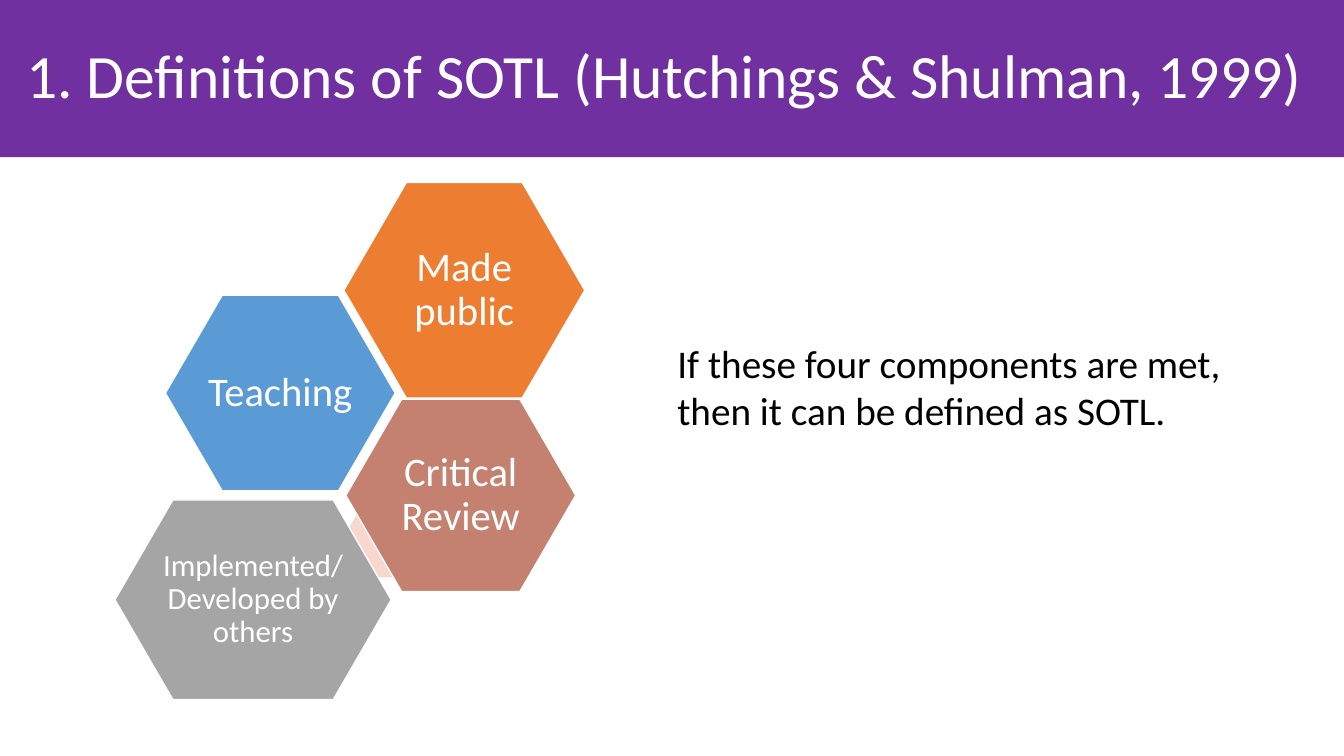
from pptx import Presentation
from pptx.dml.color import RGBColor
from pptx.enum.shapes import MSO_SHAPE
from pptx.enum.text import MSO_ANCHOR, PP_ALIGN
from pptx.util import Emu, Pt

HEXAGON, RECTANGLE = MSO_SHAPE.HEXAGON, MSO_SHAPE.RECTANGLE
MIDDLE, TOP = MSO_ANCHOR.MIDDLE, MSO_ANCHOR.TOP
CENTER, LEFT = PP_ALIGN.CENTER, PP_ALIGN.LEFT

PX = 9144  # 100 px to the inch
FONT = "Calibri"
WHITE = RGBColor(0xFF, 0xFF, 0xFF)
BLACK = RGBColor(0, 0, 0)
PURPLE = RGBColor(0x70, 0x30, 0xA0)
BLUE = RGBColor(0x5B, 0x9B, 0xD5)
ORANGE = RGBColor(0xED, 0x7D, 0x31)
CLAY = RGBColor(0xC4, 0x81, 0x70)
GRAY = RGBColor(0xA5, 0xA5, 0xA5)
PINK = RGBColor(0xF8, 0xD7, 0xCE)

# Back to front: box within the cluster, fill, text, text size, inset
HEXAGONS = [
    ((50, 112, 228, 194), BLUE, "Teaching", 29, 4),
    ((298, 152, 90, 77), PINK, None, None, None),
    ((227, 0, 239, 214), ORANGE, "Made public", 29, 4),
    ((226, 315, 90, 77), PINK, None, None, None),
    ((229, 215, 228, 191), CLAY, "Critical Review", 29, 4),
    ((0, 315, 274, 198), GRAY, "Implemented/ Developed by others", 22, 3),
]


def px(*lengths):
    return [Emu(n * PX) for n in lengths]


def write(tf, text, size, color, align=LEFT, anchor=MIDDLE, spacing=0.9):
    tf.word_wrap = True
    tf.vertical_anchor = anchor
    p = tf.paragraphs[0]
    p.alignment = align
    p.line_spacing = spacing
    r = p.add_run()
    r.text = text
    r.font.name = FONT
    r.font.size = Pt(size)
    r.font.color.rgb = color


def add_filled(s, kind, box, fill):
    sp = s.shapes.add_shape(kind, *px(*box))
    sp.shadow.inherit = False
    sp.fill.solid()
    sp.fill.fore_color.rgb = fill
    sp.line.fill.background()
    return sp


def title_band(s, x, y, w, h):
    add_filled(s, RECTANGLE, (x, y, w, h), PURPLE)
    title = s.shapes.add_textbox(*px(x + 16, y + 5, w - 24, h - 11))
    write(title.text_frame, "1. Definitions of SOTL (Hutchings & Shulman, 1999)", 44, WHITE)


def hexagon_cluster(s, x, y):
    for (dx, dy, w, h), fill, text, size, inset in HEXAGONS:
        sp = add_filled(s, HEXAGON, (x + dx, y + dy, w, h), fill)
        sp.adjustments[0] = 0.29
        if text is None:
            continue
        sp.line.color.rgb = WHITE
        sp.line.width = Pt(1)
        tf = sp.text_frame
        tf.margin_left, tf.margin_top, tf.margin_right, tf.margin_bottom = px(*[inset] * 4)
        write(tf, text, size, WHITE, CENTER)


def conclusion(s, x, y, w, h):
    tb = s.shapes.add_textbox(*px(x, y, w, h))
    write(tb.text_frame, "If these four components are met, then it can be defined as SOTL.",
          28, BLACK, anchor=TOP, spacing=1.0)


def main():
    prs = Presentation()
    prs.slide_width, prs.slide_height = px(1333, 750)
    s = prs.slides.add_slide(prs.slide_layouts[6])
    title_band(s, 0, 0, 1333, 156)
    hexagon_cluster(s, 114, 181)
    conclusion(s, 662, 332, 579, 104)
    prs.save("out.pptx")


if __name__ == "__main__":
    main()
